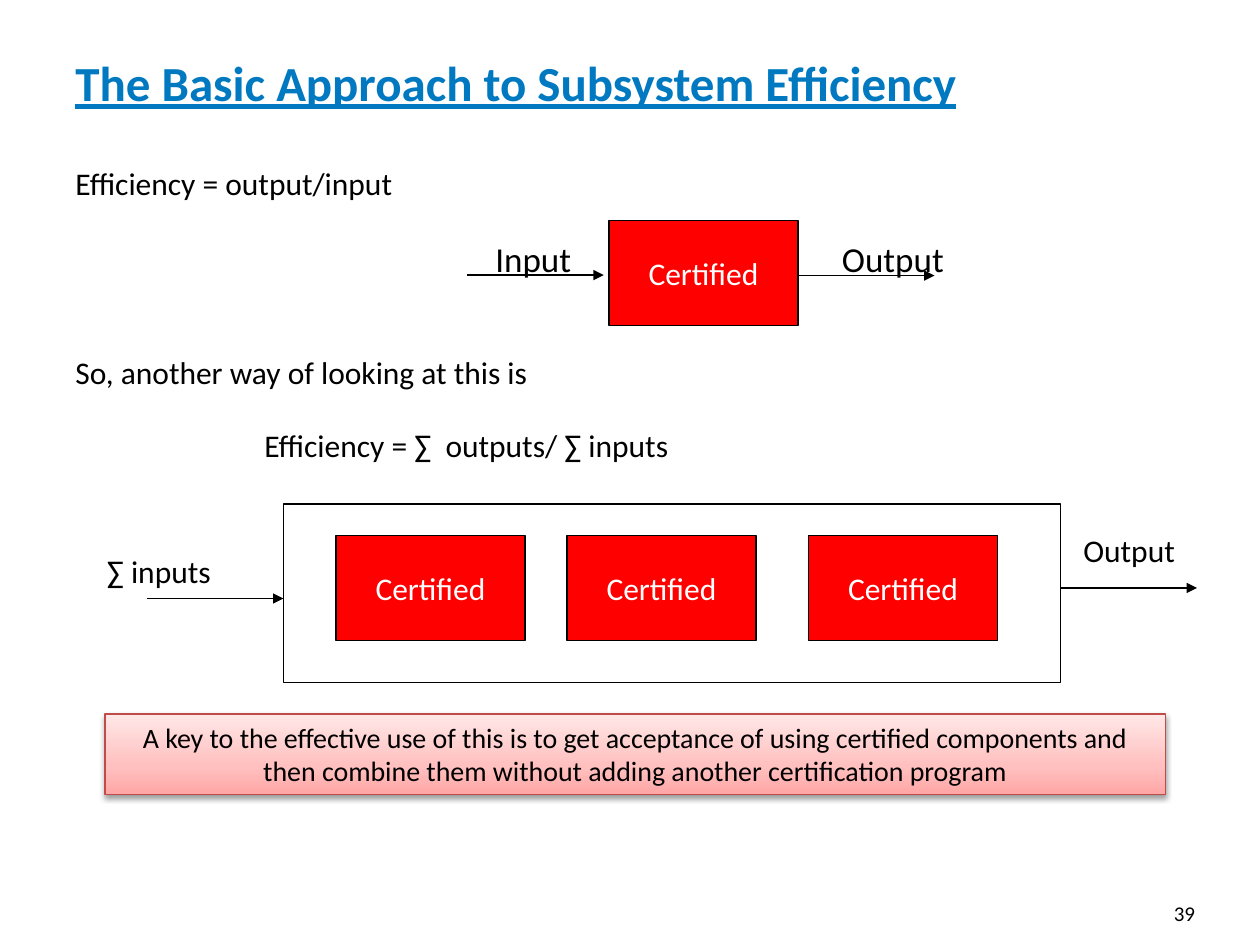
from dataclasses import dataclass

from lxml.etree import SubElement
from pptx import Presentation
from pptx.dml.color import RGBColor
from pptx.enum.shapes import MSO_CONNECTOR, MSO_SHAPE
from pptx.enum.text import MSO_ANCHOR, PP_ALIGN
from pptx.oxml.ns import qn
from pptx.util import Inches, Pt


@dataclass(frozen=True)
class Theme:
    font: str = "Calibri"
    title: str = "0079C1"
    ink: str = "000000"
    block: str = "FF0000"
    block_text: str = "FFFFFF"
    banner_line: str = "BF4C48"
    banner_stops: tuple = ((0, "FFA6A5"), (35, "FFC0BF"), (100, "FFE7E7"))
    title_size: int = 28
    label_size: int = 20
    body_size: int = 18
    banner_size: int = 16
    number_size: int = 12
    line_width: float = 0.75


THEME = Theme()
COLUMNS, ROWS = 120, 90  # square grid cells over the slide

# Places are (column, row, columns wide, rows high)
TITLE = ("The Basic Approach to Subsystem Efficiency", (6, 3.6, 88, 8.4))
STATEMENTS = [
    ("Efficiency = output/input", (6, 15, 40, 10.3), THEME.body_size),
    ("Input", (46, 22, 10, 5.3), THEME.label_size),
    ("Output", (79, 22, 15, 5.3), THEME.label_size),
    ("So, another way of looking at this is", (6, 33, 48, 4.8), THEME.body_size),
    ("Efficiency = ∑  outputs/ ∑ inputs", (24, 40, 55, 4.8), THEME.body_size),
    ("Output", (102, 50, 13, 4.8), THEME.body_size),
    ("∑ inputs", (9, 52, 15, 4.8), THEME.body_size),
]
CERTIFIED = "Certified"
CERTIFIED_SIZE = (18, 10)
CERTIFIED_CORNERS = [(58, 21), (32, 51), (54, 51), (77, 51)]
SUBSYSTEM = (27, 48, 74, 17)
ARROW_LENGTH = 13
ARROW_STARTS = [(44.5, 26.2), (76, 26.25), (14, 57), (101, 56)]
BANNER = ("A key to the effective use of this is to get acceptance of using "
          "certified components and then combine them without adding another "
          "certification program", (10, 68, 101, 7.7))
PAGE_NUMBER = ("39", (108, 85, 7, 4))

deck = Presentation()
deck.slide_width, deck.slide_height = Inches(10), Inches(7.5)
slide = deck.slides.add_slide(deck.slide_layouts[6])


def on_grid(place):
    cells = (deck.slide_width / COLUMNS, deck.slide_height / ROWS) * 2
    return [round(count * cell) for count, cell in zip(place, cells)]


def rgb(code):
    return RGBColor.from_string(code)


def write(holder, words, size, color=THEME.ink, align=PP_ALIGN.LEFT,
          anchor=MSO_ANCHOR.TOP, wrap=True):
    frame = holder.text_frame
    frame.text = words
    frame.word_wrap = wrap
    frame.vertical_anchor = anchor
    paragraph = frame.paragraphs[0]
    paragraph.alignment = align
    font = paragraph.runs[0].font
    font.name, font.size = THEME.font, Pt(size)
    font.color.rgb = rgb(color)
    return font


def add_words(words, place, size, **style):
    return write(slide.shapes.add_textbox(*on_grid(place)), words, size, **style)


def add_rectangle(place, fill=None, line=THEME.ink):
    rectangle = slide.shapes.add_shape(MSO_SHAPE.RECTANGLE, *on_grid(place))
    rectangle.shadow.inherit = False
    if fill:
        rectangle.fill.solid()
        rectangle.fill.fore_color.rgb = rgb(fill)
    else:
        rectangle.fill.background()
    rectangle.line.color.rgb = rgb(line)
    rectangle.line.width = Pt(THEME.line_width)
    return rectangle


def add_arrow(column, row):
    arrow = slide.shapes.add_connector(
        MSO_CONNECTOR.STRAIGHT,
        *on_grid((column, row, column + ARROW_LENGTH, row)))
    arrow.line.color.rgb = rgb(THEME.ink)
    arrow.line.width = Pt(THEME.line_width)
    SubElement(arrow.line._get_or_add_ln(), qn("a:tailEnd"), type="triangle")
    SubElement(arrow._element.spPr, qn("a:effectLst"))


def shade(banner):
    """Give the banner its upward three-stop gradient and soft drop shadow."""
    banner.fill.gradient()
    banner.fill.gradient_angle = 90
    properties = banner._element.spPr
    stops = properties.find(".//" + qn("a:gsLst"))
    for stop in list(stops):
        stops.remove(stop)
    for percent, color in THEME.banner_stops:
        stop = SubElement(stops, qn("a:gs"), pos=str(percent * 1000))
        SubElement(stop, qn("a:srgbClr"), val=color)
    shadow = SubElement(properties.find(qn("a:effectLst")), qn("a:outerShdw"),
                        blurRad=str(Pt(3.1)), dist=str(Pt(1.6)),
                        dir="5400000", rotWithShape="0")
    tint = SubElement(shadow, qn("a:srgbClr"), val=THEME.ink)
    SubElement(tint, qn("a:alpha"), val="38000")


title_font = add_words(*TITLE, THEME.title_size, color=THEME.title,
                       anchor=MSO_ANCHOR.MIDDLE)
title_font.bold = title_font.underline = True

add_rectangle(SUBSYSTEM)
for corner in CERTIFIED_CORNERS:
    component = add_rectangle(corner + CERTIFIED_SIZE, THEME.block)
    write(component, CERTIFIED, THEME.body_size, THEME.block_text,
          PP_ALIGN.CENTER, MSO_ANCHOR.MIDDLE, wrap=False)
for start in ARROW_STARTS:
    add_arrow(*start)
for statement in STATEMENTS:
    add_words(*statement)

message, banner_place = BANNER
key_banner = add_rectangle(banner_place, line=THEME.banner_line)
shade(key_banner)
write(key_banner, message, THEME.banner_size, align=PP_ALIGN.CENTER)
add_words(*PAGE_NUMBER, THEME.number_size, align=PP_ALIGN.RIGHT,
          anchor=MSO_ANCHOR.MIDDLE)

deck.save("out.pptx")
